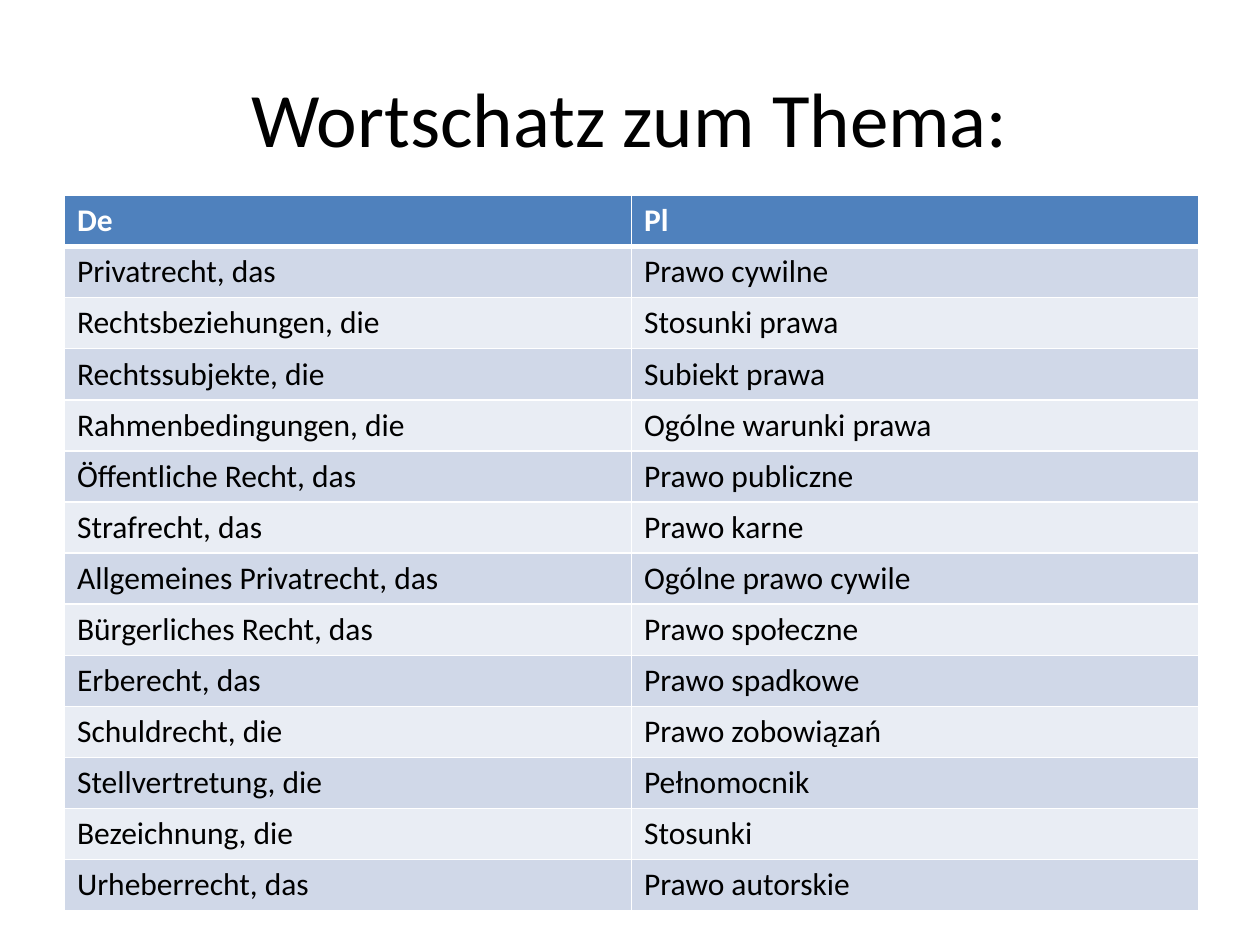
from lxml.etree import SubElement
from pptx import Presentation
from pptx.dml.color import RGBColor
from pptx.enum.text import MSO_ANCHOR, PP_ALIGN
from pptx.oxml.ns import qn
from pptx.util import Cm, Pt

FONT = "Calibri"
WHITE, BLACK, HEADER_BLUE = "FFFFFF", "000000", "4F81BD"
BAND_COLOURS = ("E9EDF4", "D0D8E8")

VOCABULARY = [
    ("De", "Pl"),
    ("Privatrecht, das", "Prawo cywilne"),
    ("Rechtsbeziehungen, die", "Stosunki prawa"),
    ("Rechtssubjekte, die", "Subiekt prawa"),
    ("Rahmenbedingungen, die", "Ogólne warunki prawa"),
    ("Öffentliche Recht, das", "Prawo publiczne"),
    ("Strafrecht, das", "Prawo karne"),
    ("Allgemeines Privatrecht, das", "Ogólne prawo cywile"),
    ("Bürgerliches Recht, das", "Prawo społeczne"),
    ("Erberecht, das", "Prawo spadkowe"),
    ("Schuldrecht, die", "Prawo zobowiązań"),
    ("Stellvertretung, die", "Pełnomocnik"),
    ("Bezeichnung, die", "Stosunki"),
    ("Urheberrecht, das", "Prawo autorskie"),
]


def colour(hex_code):
    return RGBColor.from_string(hex_code)


def format_text(paragraph, size, hex_code, bold=False):
    for run in paragraph.runs:
        run.font.name = FONT
        run.font.size = Pt(size)
        run.font.bold = bold
        run.font.color.rgb = colour(hex_code)


def add_borders(cell, top=1, bottom=1):
    """Draw white cell borders, with widths in points."""
    properties = cell._tc.get_or_add_tcPr()
    for side, width in (("L", 1), ("R", 1), ("T", top), ("B", bottom)):
        line = SubElement(properties, qn(f"a:ln{side}"), w=str(Pt(width)))
        SubElement(SubElement(line, qn("a:solidFill")), qn("a:srgbClr"), val=WHITE)


def fill_cell(cell, text, row_index):
    is_header = row_index == 0
    cell.text = text
    format_text(cell.text_frame.paragraphs[0], 18,
                WHITE if is_header else BLACK, bold=is_header)
    add_borders(cell, top=3 if row_index == 1 else 1, bottom=3 if is_header else 1)
    cell.fill.solid()
    cell.fill.fore_color.rgb = colour(
        HEADER_BLUE if is_header else BAND_COLOURS[row_index % 2])


def set_title(slide, text):
    title = slide.shapes.title
    title.left, title.top = Cm(1.27), Cm(0.76)
    title.width, title.height = Cm(22.86), Cm(3.18)
    title.text_frame.text = text
    title.text_frame.vertical_anchor = MSO_ANCHOR.MIDDLE
    heading = title.text_frame.paragraphs[0]
    heading.alignment = PP_ALIGN.CENTER
    format_text(heading, 44, BLACK)


def add_vocabulary(slide, entries):
    row_height = Cm(1.03)
    vocabulary = slide.shapes.add_table(
        len(entries), 2, Cm(1.3), Cm(3.94), Cm(22.86), row_height * len(entries)).table
    for row_index, entry in enumerate(entries):
        vocabulary.rows[row_index].height = row_height
        for column_index, text in enumerate(entry):
            fill_cell(vocabulary.cell(row_index, column_index), text, row_index)


def main():
    presentation = Presentation()
    presentation.slide_width, presentation.slide_height = Cm(25.4), Cm(19.05)
    slide = presentation.slides.add_slide(presentation.slide_layouts[5])
    set_title(slide, "Wortschatz zum Thema:")
    add_vocabulary(slide, VOCABULARY)
    presentation.save("out.pptx")


if __name__ == "__main__":
    main()
